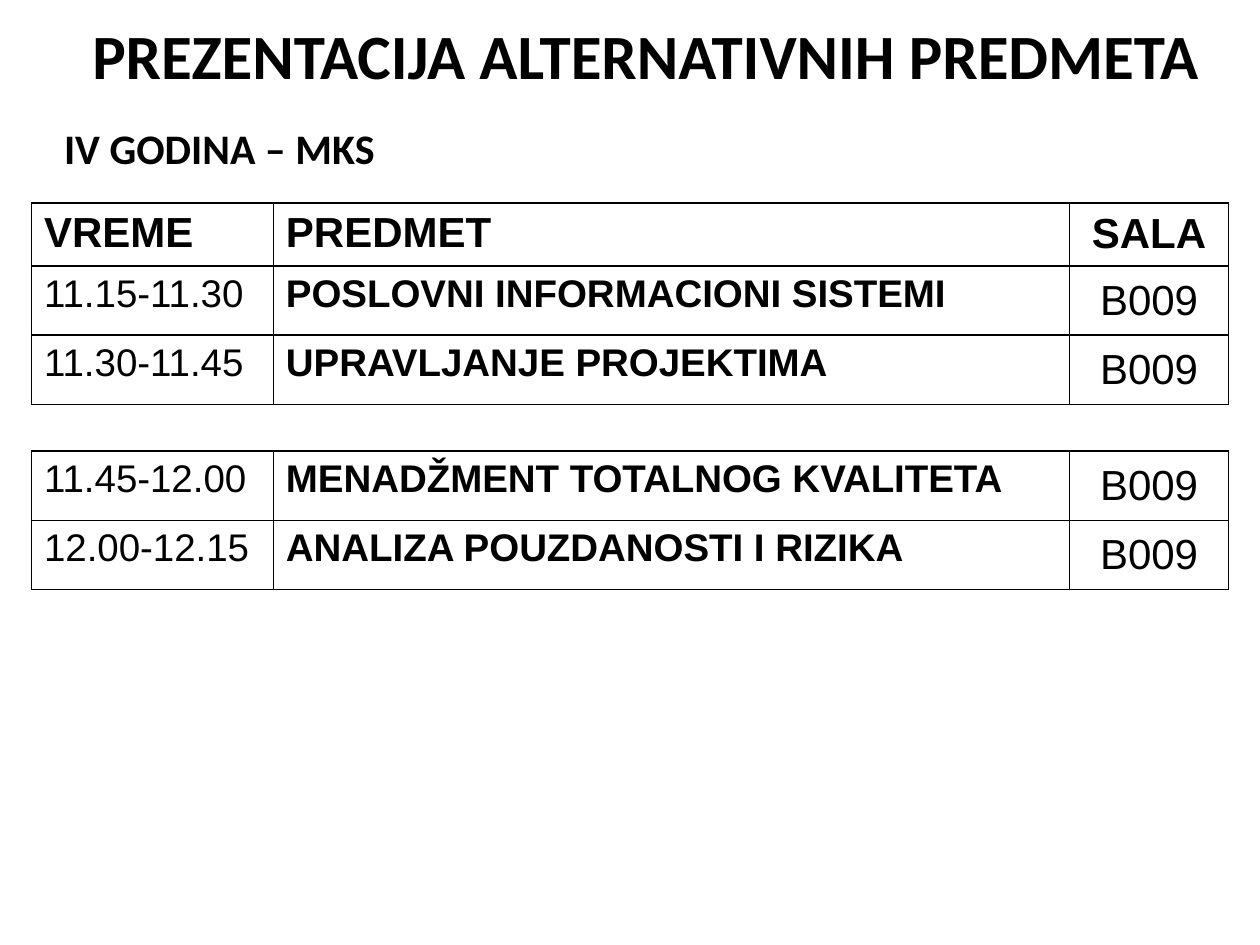
from lxml import etree
from pptx import Presentation, util as u
from pptx.dml.color import RGBColor
from pptx.enum import text
from pptx.oxml.ns import qn

BLACK = RGBColor(0, 0, 0)
COLUMNS = [1.92, 6.32, 1.26]
HEADER = ("VREME", "PREDMET", "SALA")
FIRST_TERMS = [
    ("11.15-11.30", "POSLOVNI INFORMACIONI SISTEMI", "B009"),
    ("11.30-11.45", "UPRAVLJANJE PROJEKTIMA", "B009"),
]
SECOND_TERMS = [
    ("11.45-12.00", "MENADŽMENT TOTALNOG KVALITETA", "B009"),
    ("12.00-12.15", "ANALIZA POUZDANOSTI I RIZIKA", "B009"),
]


def write(frame, words, size, font="Arial", bold=False, align=text.PP_ALIGN.LEFT):
    para = frame.paragraphs[0]
    para.alignment = align
    span = para.add_run()
    span.text = words
    span.font.name = font
    span.font.size = u.Pt(size)
    span.font.bold = bold
    span.font.color.rgb = BLACK


class SchedulePage:
    """Draws headings and timetable grids on one slide in a shared style."""

    def __init__(self, page, heading_font="Calibri", border=1):
        self.page = page
        self.heading_font = heading_font
        self.border = border

    def heading(self, words, left, top, width, height, size,
                align=text.PP_ALIGN.LEFT, anchor=text.MSO_ANCHOR.TOP):
        box = self.page.shapes.add_textbox(
            u.Inches(left), u.Inches(top), u.Inches(width), u.Inches(height))
        frame = box.text_frame
        frame.word_wrap = True
        frame.vertical_anchor = anchor
        write(frame, words, size, self.heading_font, True, align)

    def outline(self, cell):
        properties = cell._tc.get_or_add_tcPr()
        for index, side in enumerate(("lnL", "lnR", "lnT", "lnB")):
            line = etree.Element(qn(f"a:{side}"), w=str(u.Pt(self.border)))
            fill = etree.SubElement(line, qn("a:solidFill"))
            etree.SubElement(fill, qn("a:srgbClr"), val=str(BLACK))
            properties.insert(index, line)

    def timetable(self, rows, top, heights, has_header=False):
        table = self.page.shapes.add_table(
            len(rows), len(COLUMNS), u.Inches(0.25), u.Inches(top),
            u.Inches(sum(COLUMNS)), u.Inches(sum(heights))).table
        table.first_row = has_header
        table.horz_banding = False
        for column, width in zip(table.columns, COLUMNS):
            column.width = u.Inches(width)
        for index, (row, height) in enumerate(zip(table.rows, heights)):
            row.height = u.Inches(height)
            is_header = has_header and index == 0
            for position, (cell, words) in enumerate(zip(row.cells, rows[index])):
                is_room = position == 2
                cell.fill.background()
                self.outline(cell)
                if is_room:
                    cell.vertical_anchor = text.MSO_ANCHOR.MIDDLE
                write(cell.text_frame, words,
                      size=24 if is_header or is_room else 22,
                      bold=is_header or position == 1,
                      align=text.PP_ALIGN.CENTER if is_room else text.PP_ALIGN.LEFT)


def main():
    deck = Presentation()
    deck.slide_width, deck.slide_height = u.Inches(10), u.Inches(7.5)
    schedule = SchedulePage(deck.slides.add_slide(deck.slide_layouts[6]))
    schedule.heading("PREZENTACIJA ALTERNATIVNIH PREDMETA", 0, -0.42, 10.25, 1.7, 36,
                     text.PP_ALIGN.CENTER, text.MSO_ANCHOR.MIDDLE)
    schedule.heading("IV GODINA – MKS", 0.41, 0.92, 5.42, 0.91, 24)
    schedule.timetable([HEADER] + FIRST_TERMS, 1.61, [0.5, 0.55, 0.55], has_header=True)
    schedule.timetable(SECOND_TERMS, 3.58, [0.55, 0.55])
    deck.save("out.pptx")


if __name__ == "__main__":
    main()
